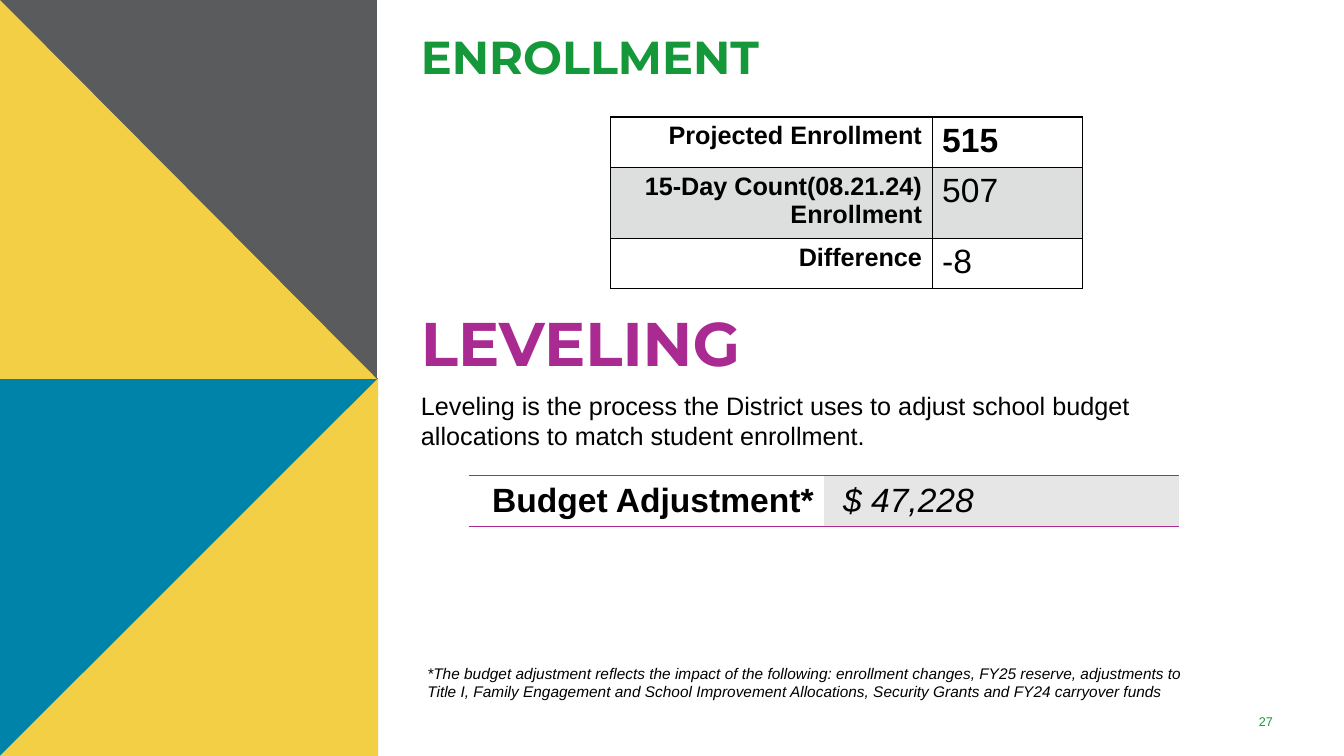
from pptx import Presentation
from pptx import util as u
from pptx.dml.color import RGBColor
from pptx.enum import text
from pptx.oxml import parse_xml
from pptx.oxml.ns import nsdecls, qn
from lxml import etree

THEME = {
    "green": "159839", "purple": "A92A91", "blue": "0083A9", "yellow": "F3CF45",
    "gray": "595B5D", "light": "E7E6E6", "black": "000000",
    "display": "Montserrat", "body": "Arial",
    "heading": 33, "section": 44, "copy": 18, "figure": 24, "note": 11, "page": 9,
}

PANELS = [
    ("blue", [(0, 9.53), (9.53, 9.53), (9.53, 19.05), (0, 19.05)]),
    ("yellow", [(9.53, 9.53), (9.53, 19.05), (0, 19.05)]),
    ("gray", [(0, 0), (9.5, 0), (9.5, 9.55), (0, 9.55)]),
    ("yellow", [(0, 0), (9.5, 9.55), (0, 9.55)]),
]

TEXTS = [
    ("ENROLLMENT", (10.36, 0.58, 18.8, 2.13), "heading", "display", "green", {"bold": True}),
    ("LEVELING", (10.36, 7.57, 18.8, 2.13), "section", "display", "purple", {"bold": True}),
    ("Leveling is the process the District uses to adjust school budget allocations "
     "to match student enrollment.",
     (10.36, 9.7, 20.98, 1.8), "copy", "body", "black", {}),
    ("*The budget adjustment reflects the impact of the following: enrollment changes, "
     "FY25 reserve, adjustments to Title I, Family Engagement and School Improvement "
     "Allocations, Security Grants and FY24 carryover funds",
     (10.52, 16.61, 20.17, 1.19), "note", "body", "black", {"italic": True}),
]
PAGE = ("27", (30.53, 17.81, 2.74, 0.76), "page", "body", "green", {})

BOLD, PLAIN, ITALIC = (True, False), (False, False), (False, True)
ENROLLMENT = {
    "at": (15.39, 2.95), "columns": (8.1, 3.79), "row_height": 1.04,
    "label_size": "copy", "anchor": text.MSO_ANCHOR.TOP,
    "rows": [
        ("Projected Enrollment", "515", BOLD, (None, None)),
        ("15-Day Count(08.21.24) Enrollment", "507", PLAIN, (("gray", 20), ("gray", 20))),
        ("Difference", "-8", PLAIN, (None, None)),
    ],
    "borders": {"L": "black", "R": "black", "T": "black", "B": "black"},
}
BUDGET = {
    "at": (11.81, 11.99), "columns": (8.95, 8.95), "row_height": 1.27,
    "label_size": "figure", "anchor": text.MSO_ANCHOR.MIDDLE,
    "rows": [("Budget Adjustment*", " $ 47,228", ITALIC, (None, ("light", 100)))],
    "borders": {"L": None, "R": None, "T": "gray", "B": "purple"},
}


def color(name):
    return RGBColor.from_string(THEME[name])


def style(paragraph, size, face, ink, bold=False, italic=False):
    font = paragraph.font
    font.size, font.name = u.Pt(THEME[size]), THEME[face]
    font.bold, font.italic = bold, italic
    font.color.rgb = color(ink)


def add_panel(slide, ink, corners):
    points = [(u.Cm(x), u.Cm(y)) for x, y in corners]
    builder = slide.shapes.build_freeform(*points[0])
    builder.add_line_segments(points[1:], close=True)
    panel = builder.convert_to_shape()
    panel.shadow.inherit = False
    panel.fill.solid()
    panel.fill.fore_color.rgb = color(ink)
    panel.line.fill.background()


def add_text(slide, words, box, size, face, ink, emphasis):
    frame = slide.shapes.add_textbox(*map(u.Cm, box)).text_frame
    frame.word_wrap = True
    paragraph = frame.paragraphs[0]
    paragraph.text = words
    style(paragraph, size, face, ink, **emphasis)
    return frame


def fill_cell(cell, tint):
    if tint is None:
        cell.fill.background()
        return
    ink, opacity = tint
    cell.fill.solid()
    cell.fill.fore_color.rgb = color(ink)
    if opacity < 100:
        swatch = cell._tc.tcPr.find(qn("a:solidFill"))[0]
        etree.SubElement(swatch, qn("a:alpha")).set("val", str(opacity * 1000))


def border_cell(cell, borders):
    properties = cell._tc.get_or_add_tcPr()
    for index, (side, ink) in enumerate(borders.items()):
        paint = (f'<a:solidFill><a:srgbClr val="{THEME[ink]}"/></a:solidFill>'
                 if ink else "<a:noFill/>")
        properties.insert(index, parse_xml(
            f'<a:ln{side} {nsdecls("a")} w="{u.Pt(1)}">{paint}</a:ln{side}>'))


def add_grid(slide, grid):
    rows, columns = grid["rows"], grid["columns"]
    size = (sum(columns), grid["row_height"] * len(rows))
    table = slide.shapes.add_table(
        len(rows), len(columns), *map(u.Cm, grid["at"] + size)).table
    table.first_row = table.horz_banding = False
    for column, width in zip(table.columns, columns):
        column.width = u.Cm(width)
    for row, (label, value, emphasis, tints) in zip(table.rows, rows):
        row.height = u.Cm(grid["row_height"])
        entries = [(label, grid["label_size"], BOLD, text.PP_ALIGN.RIGHT),
                   (value, "figure", emphasis, text.PP_ALIGN.LEFT)]
        for cell, (words, size, weight, align), tint in zip(row.cells, entries, tints):
            cell.text = words
            cell.vertical_anchor = grid["anchor"]
            paragraph = cell.text_frame.paragraphs[0]
            paragraph.alignment = align
            style(paragraph, size, "body", "black", *weight)
            fill_cell(cell, tint)
            border_cell(cell, grid["borders"])


def main():
    deck = Presentation()
    deck.slide_width, deck.slide_height = u.Cm(33.87), u.Cm(19.05)
    slide = deck.slides.add_slide(deck.slide_layouts[6])
    for panel in PANELS:
        add_panel(slide, *panel)
    for entry in TEXTS:
        add_text(slide, *entry)
    page = add_text(slide, *PAGE)
    page.vertical_anchor = text.MSO_ANCHOR.MIDDLE
    page.paragraphs[0].alignment = text.PP_ALIGN.CENTER
    for grid in (ENROLLMENT, BUDGET):
        add_grid(slide, grid)
    deck.save("out.pptx")


if __name__ == "__main__":
    main()
